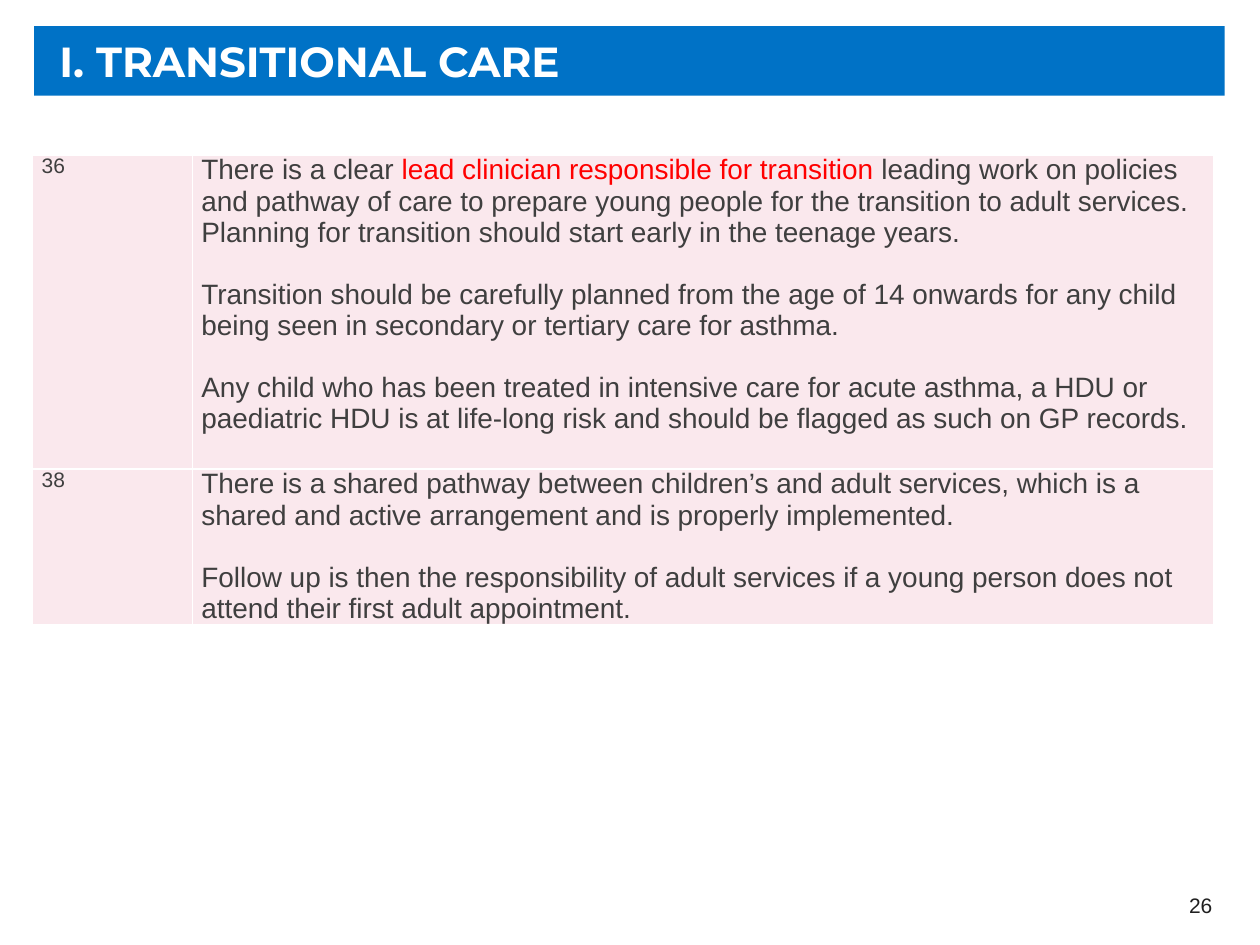
from pptx import Presentation
from pptx.dml.color import RGBColor as Rgb
from pptx.enum.shapes import MSO_SHAPE as Kind
from pptx.enum.text import MSO_ANCHOR as Anchor, PP_ALIGN as Align
from pptx.oxml import parse_xml
from pptx.util import Cm, Pt

TITLE = "I. TRANSITIONAL CARE"
PAGE = "26"
ROWS = [
    ("36", [
        [("There is a clear ", "3F3F3F"),
         ("lead clinician responsible for transition", "FF0000"),
         (" leading work on policies and pathway of care to prepare young people "
          "for the transition to adult services. Planning for transition should "
          "start early in the teenage years.", "3F3F3F")],
        [("Transition should be carefully planned from the age of 14 onwards for any "
          "child being seen in secondary or tertiary care for asthma.", "3F3F3F")],
        [("Any child who has been treated in intensive care for acute asthma, a HDU or "
          "paediatric HDU is at life-long risk and should be flagged as such on GP "
          "records.", "3F3F3F")],
    ]),
    ("38", [
        [("There is a shared pathway between children’s and adult services, which is a "
          "shared and active arrangement and is properly implemented.", "3F3F3F")],
        [("Follow up is then the responsibility of adult services if a young person "
          "does not attend their first adult appointment.", "3F3F3F")],
    ]),
]
WIDTHS = [3.22, 20.58]
HEIGHTS = [6.33, 3.12]
GAP = 17.8
HEAD = {"name": "Montserrat", "size": Pt(24), "bold": True}
BODY = {"name": "Arial", "size": Pt(16)}
SMALL = {"name": "Arial", "size": Pt(12)}
INSET = {"margin_left": Cm(0.18), "margin_right": Cm(0.18),
         "margin_top": 0, "margin_bottom": 0}
NS = "http://schemas.openxmlformats.org/drawingml/2006/main"


def tint(part, code):
    part.rgb = Rgb.from_string(code)


def paint(part, code):
    part.fill.solid()
    tint(part.fill.fore_color, code)


def apply(part, form):
    for key, val in form.items():
        setattr(part, key, val)


def write(frame, paras, form, align=Align.LEFT):
    for i, runs in enumerate(paras):
        para = frame.add_paragraph() if i else frame.paragraphs[0]
        apply(para, {"alignment": align, "space_before": Pt(GAP if i else 0)})
        for text, code in runs:
            run = para.add_run()
            run.text = text
            apply(run.font, form)
            tint(run.font.color, code)


def edge(cell):
    props = cell._tc.get_or_add_tcPr()
    for i, side in enumerate("LRTB"):
        props.insert(i, parse_xml(
            f'<a:ln{side} xmlns:a="{NS}" w="12700"><a:solidFill>'
            f'<a:srgbClr val="FFFFFF"/></a:solidFill></a:ln{side}>'))


def add_head(slide):
    bar = slide.shapes.add_shape(Kind.RECTANGLE, Cm(0.69), Cm(0.53), Cm(24), Cm(1.4))
    bar.shadow.inherit = False
    bar.line.fill.background()
    paint(bar, "0072C6")
    apply(bar.text_frame, {"margin_left": Cm(0.51), "word_wrap": True,
                           "vertical_anchor": Anchor.MIDDLE})
    write(bar.text_frame, [[(TITLE, "FFFFFF")]], HEAD)


def add_grid(slide):
    grid = slide.shapes.add_table(len(ROWS), len(WIDTHS), Cm(0.66), Cm(3.12),
                                  Cm(sum(WIDTHS)), Cm(sum(HEIGHTS))).table
    apply(grid, {"first_row": False, "horz_banding": False})
    for col, width in zip(grid.columns, WIDTHS):
        col.width = Cm(width)
    for row, height, (num, paras) in zip(grid.rows, HEIGHTS, ROWS):
        row.height = Cm(height)
        parts = [([[(num, "3F3F3F")]], SMALL), (paras, BODY)]
        for cell, (text, form) in zip(row.cells, parts):
            apply(cell, INSET)
            paint(cell, "FAE8ED")
            edge(cell)
            write(cell.text_frame, text, form)


def add_page(slide):
    box = slide.shapes.add_textbox(Cm(18.77), Cm(17.73), Cm(5.92), Cm(1.02))
    apply(box.text_frame, {"word_wrap": True, "vertical_anchor": Anchor.MIDDLE})
    write(box.text_frame, [[(PAGE, "202020")]], SMALL, Align.RIGHT)


def main():
    deck = Presentation()
    apply(deck, {"slide_width": Cm(25.4), "slide_height": Cm(19.05)})
    slide = deck.slides.add_slide(deck.slide_layouts[6])
    add_head(slide)
    add_grid(slide)
    add_page(slide)
    deck.save("out.pptx")


if __name__ == "__main__":
    main()
